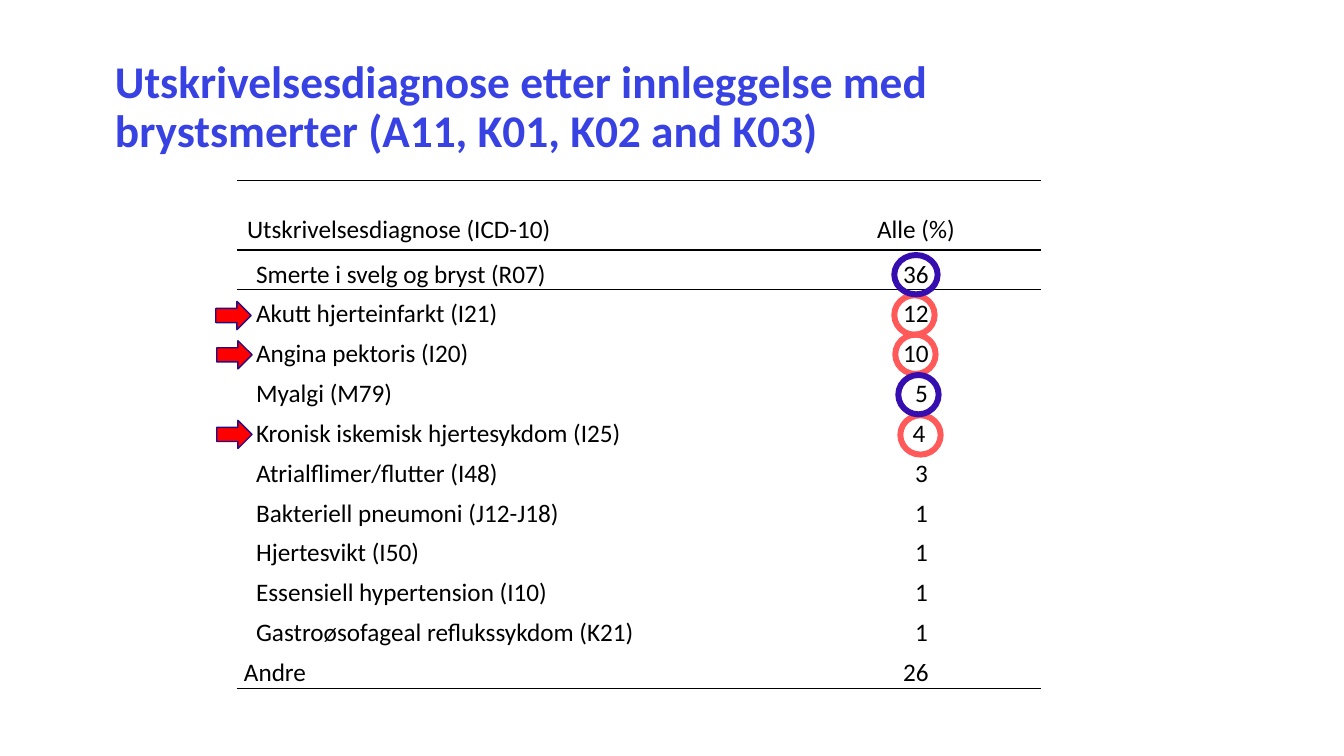
from dataclasses import dataclass

from lxml import etree
from pptx import Presentation
from pptx.dml.color import RGBColor
from pptx.enum.shapes import MSO_SHAPE
from pptx.enum.text import MSO_ANCHOR, MSO_AUTO_SIZE, PP_ALIGN
from pptx.oxml.ns import qn
from pptx.util import Inches, Pt

LEFT, CENTER = PP_ALIGN.LEFT, PP_ALIGN.CENTER
BOTTOM, MIDDLE = MSO_ANCHOR.BOTTOM, MSO_ANCHOR.MIDDLE
NO_AUTOFIT = MSO_AUTO_SIZE.NONE
OVAL, RIGHT_ARROW = MSO_SHAPE.OVAL, MSO_SHAPE.RIGHT_ARROW

FONT = "Calibri"
BLACK = RGBColor(0x00, 0x00, 0x00)
TITLE_BLUE = RGBColor(0x38, 0x42, 0xE2)
RING_RED = RGBColor(0xFF, 0x59, 0x59)
RING_BLUE = RGBColor(0x36, 0x0D, 0xAF)
ARROW_RED = RGBColor(0xFF, 0x00, 0x00)
ARROW_EDGE = RGBColor(0x28, 0x0A, 0x81)

TITLE = "Utskrivelsesdiagnose etter innleggelse med brystsmerter (A11, K01, K02 and K03)"
HEADER = ("Utskrivelsesdiagnose (ICD-10)", "Alle (%)")
HEADER_H = 0.69
TABLE_H = 5.04
COL_WIDTHS = (5.49, 2.49)


@dataclass(frozen=True)
class Diagnosis:
    name: str
    percent: str
    indent: float = 0.12
    shift: float = 0.11  # extra left margin that lines up the units digits


@dataclass(frozen=True)
class Ring:
    x: float
    y: float
    color: RGBColor
    w: float = 0.4


@dataclass(frozen=True)
class Arrow:
    x: float
    y: float


DIAGNOSES = (
    Diagnosis("Smerte i svelg og bryst (R07)", "36", shift=0),
    Diagnosis("Akutt hjerteinfarkt (I21)", "12", shift=0),
    Diagnosis("Angina pektoris (I20)", "10", shift=0),
    Diagnosis("Myalgi (M79)", "5"),
    Diagnosis("Kronisk iskemisk hjertesykdom (I25)", "4", shift=0.06),
    Diagnosis("Atrialflimer/flutter (I48)", "3"),
    Diagnosis("Bakteriell pneumoni (J12-J18)", "1"),
    Diagnosis("Hjertesvikt (I50)", "1"),
    Diagnosis("Essensiell hypertension (I10)", "1"),
    Diagnosis("Gastroøsofageal reflukssykdom (K21)", "1"),
    Diagnosis("Andre", "26", indent=0, shift=0),
)
RULED_EDGES = (0, 1, 2, len(DIAGNOSES) + 1)  # edge n lies above row n

RINGS = (
    Ring(8.87, 2.93, RING_RED),
    Ring(8.88, 3.32, RING_RED),
    Ring(8.93, 4.12, RING_RED),
    Ring(8.87, 2.53, RING_BLUE, w=0.43),
    Ring(8.91, 3.72, RING_BLUE),
)
ARROWS = (Arrow(2.14, 2.99), Arrow(2.15, 3.38), Arrow(2.15, 4.17))


def add_run(p, text: str, size: float, color: RGBColor, bold: bool = False) -> None:
    r = p.add_run()
    r.text = text
    r.font.name = FONT
    r.font.size = Pt(size)
    r.font.bold = bold
    r.font.color.rgb = color


def set_borders(cell, row: int) -> None:
    """Rule the listed edges in black and hide every other cell border."""
    tc_pr = cell._tc.get_or_add_tcPr()
    ruled = {"lnT": row in RULED_EDGES, "lnB": row + 1 in RULED_EDGES}
    for i, tag in enumerate(("lnL", "lnR", "lnT", "lnB")):
        ln = etree.Element(qn(f"a:{tag}"), w=str(Pt(1)))
        if ruled.get(tag):
            fill = etree.SubElement(ln, qn("a:solidFill"))
            etree.SubElement(fill, qn("a:srgbClr"), val=str(BLACK))
        else:
            etree.SubElement(ln, qn("a:noFill"))
        tc_pr.insert(i, ln)


def fill_cell(cell, row: int, text: str, align, indent: float = 0, shift: float = 0) -> None:
    cell.vertical_anchor = BOTTOM
    cell.fill.background()
    set_borders(cell, row)
    p = cell.text_frame.paragraphs[0]
    p.alignment = align
    if row > 0:
        cell.margin_left = Inches(0.07 + shift)
        cell.margin_right = Inches(0.07)
        cell.margin_top = cell.margin_bottom = 0
        p.line_spacing = 1.07
        p.space_after = Pt(8)
        p_pr = p._p.get_or_add_pPr()
        p_pr.set("marL", "0")
        p_pr.set("indent", str(Inches(indent)))
    add_run(p, text, 18, BLACK)


def add_title(s) -> None:
    sp = s.shapes.title
    sp.left, sp.top = Inches(1.14), Inches(0.59)
    sp.width, sp.height = Inches(10), Inches(0.96)
    tf = sp.text_frame
    tf.word_wrap = True
    tf.auto_size = NO_AUTOFIT
    tf.vertical_anchor = MIDDLE
    tf.margin_left = tf.margin_right = tf.margin_top = tf.margin_bottom = 0
    p = tf.paragraphs[0]
    p.alignment = LEFT
    p.line_spacing = 0.9
    add_run(p, TITLE, 32.4, TITLE_BLUE, bold=True)


def add_diagnosis_table(s) -> None:
    table = s.shapes.add_table(
        len(DIAGNOSES) + 1, len(COL_WIDTHS),
        Inches(2.35), Inches(1.79), Inches(sum(COL_WIDTHS)), Inches(TABLE_H),
    ).table
    table.first_row = table.horz_banding = False
    for col, width in zip(table.columns, COL_WIDTHS):
        col.width = Inches(width)
    for row in table.rows:
        row.height = Inches((TABLE_H - HEADER_H) / len(DIAGNOSES))
    table.rows[0].height = Inches(HEADER_H)
    for col, (text, align) in enumerate(zip(HEADER, (LEFT, CENTER))):
        fill_cell(table.cell(0, col), 0, text, align)
    for row, d in enumerate(DIAGNOSES, start=1):
        fill_cell(table.cell(row, 0), row, d.name, LEFT, indent=d.indent)
        fill_cell(table.cell(row, 1), row, d.percent, CENTER, shift=d.shift)


def add_ring(s, ring: Ring) -> None:
    sp = s.shapes.add_shape(OVAL, Inches(ring.x), Inches(ring.y), Inches(ring.w), Inches(0.39))
    sp.shadow.inherit = False
    sp.fill.background()
    sp.line.color.rgb = ring.color
    sp.line.width = Pt(4.25)


def add_arrow(s, arrow: Arrow) -> None:
    sp = s.shapes.add_shape(
        RIGHT_ARROW, Inches(arrow.x), Inches(arrow.y), Inches(0.35), Inches(0.28))
    sp.shadow.inherit = False
    sp.fill.solid()
    sp.fill.fore_color.rgb = ARROW_RED
    sp.line.color.rgb = ARROW_EDGE
    sp.line.width = Pt(1)


def main() -> None:
    prs = Presentation()
    prs.slide_width, prs.slide_height = Inches(13.33), Inches(7.5)
    s = prs.slides.add_slide(prs.slide_layouts[5])
    add_title(s)
    add_diagnosis_table(s)
    for ring in RINGS:
        add_ring(s, ring)
    for arrow in ARROWS:
        add_arrow(s, arrow)
    prs.save("out.pptx")


if __name__ == "__main__":
    main()
